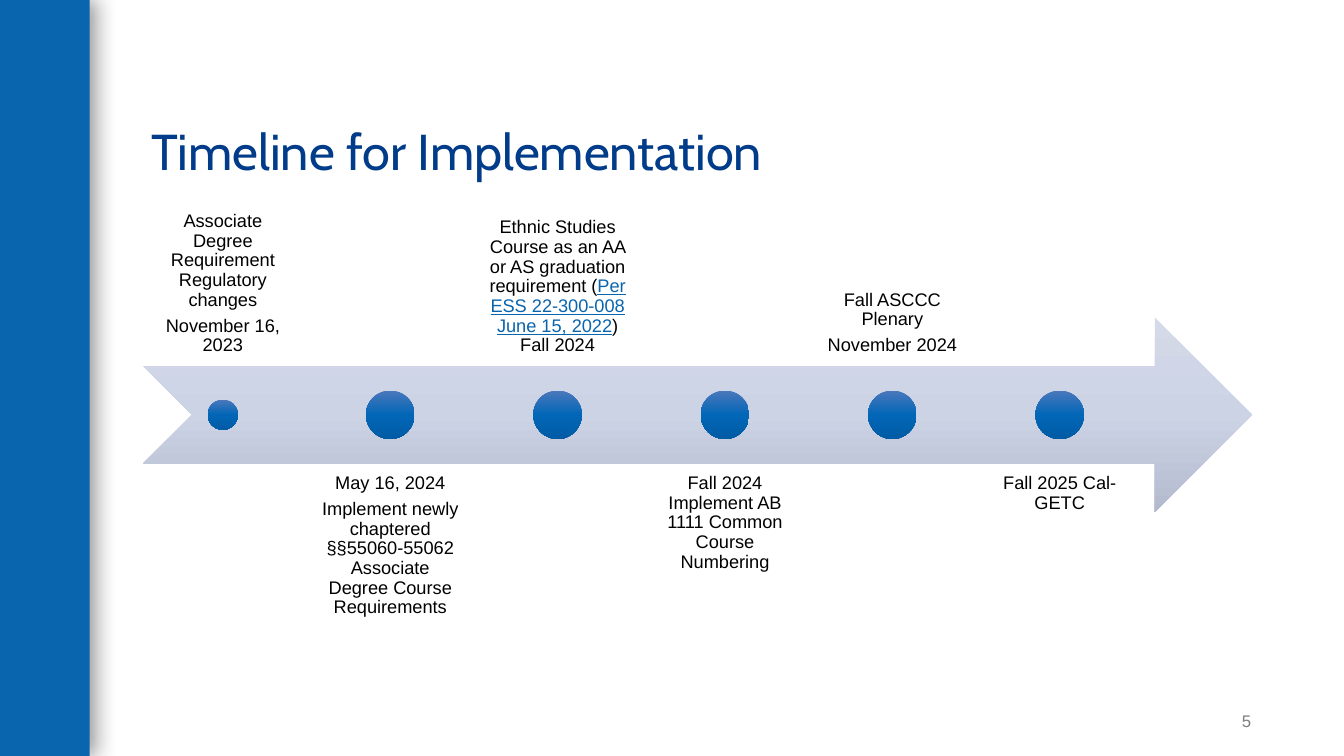
from pptx import Presentation
from pptx.dml.color import RGBColor
from pptx.enum.shapes import MSO_SHAPE
from pptx.enum.text import MSO_ANCHOR, PP_ALIGN
from pptx.oxml import parse_xml
from pptx.oxml.ns import nsdecls
from pptx.util import Inches, Pt

RECTANGLE, ARROW, OVAL = MSO_SHAPE.RECTANGLE, MSO_SHAPE.NOTCHED_RIGHT_ARROW, MSO_SHAPE.OVAL
TOP, MIDDLE, BOTTOM = MSO_ANCHOR.TOP, MSO_ANCHOR.MIDDLE, MSO_ANCHOR.BOTTOM
LEFT, CENTER, RIGHT = PP_ALIGN.LEFT, PP_ALIGN.CENTER, PP_ALIGN.RIGHT

TITLE = "Timeline for Implementation"
PAGE_NUMBER = "5"
REFERENCE = "Per ESS 22-300-008 June 15, 2022"
# Each milestone is a list of paragraphs, each paragraph a list of runs.
MILESTONES = [
    [["Associate Degree Requirement Regulatory changes"], ["November 16, 2023"]],
    [["May 16, 2024"],
     ["Implement newly chaptered §§55060-55062 Associate Degree Course Requirements"]],
    [["Ethnic Studies Course as an AA or AS graduation requirement (",
      REFERENCE, ") Fall 2024"]],
    [["Fall 2024 Implement AB 1111 Common Course Numbering"]],
    [["Fall ASCCC Plenary"], ["November 2024"]],
    [["Fall 2025 Cal-GETC"]],
]

COLORS = {"sidebar": "0A65AF", "title": "003C89", "text": "000000",
          "reference": "0965AE", "page": "7F7F7F"}
ARROW_GRADIENT = ("D5DAE8", "CBD3E5", "B3BACD")
DOT_GRADIENT = ("4B78BB", "0266B7", "005BA4")

ARROW_LEFT, ARROW_TOP, ARROW_WIDTH, ARROW_HEIGHT = 1.42, 3.15, 11, 1.93
ARROW_MIDDLE = ARROW_TOP + ARROW_HEIGHT / 2
LABEL_WIDTH, LABEL_STEP = 1.58, 1.66
LABEL_TOP_ABOVE, LABEL_TOP_BELOW = 1.7, 4.6
FIRST_DOT_SIZE, DOT_SIZE = 0.3, 0.48


def format_run(run, size, color, font="Arial"):
    run.font.name = font
    run.font.size = Pt(size)
    run.font.color.rgb = RGBColor.from_string(COLORS[color])


def add_plain_shape(slide, kind, left, top, width, height):
    """Add a preset shape with neither outline nor shadow."""
    shape = slide.shapes.add_shape(
        kind, Inches(left), Inches(top), Inches(width), Inches(height))
    shape.shadow.inherit = False
    shape.line.fill.background()
    return shape


def fill_gradient(shape, colors):
    """Fill from top to bottom with evenly spaced colours."""
    shape.fill.gradient()
    shape.fill.gradient_angle = 270
    stops = shape._element.spPr.find(".//{*}gsLst")
    for stop in list(stops):
        stops.remove(stop)
    for index, color in enumerate(colors):
        position = 100000 * index // (len(colors) - 1)
        stops.append(parse_xml(
            f'<a:gs {nsdecls("a")} pos="{position}"><a:srgbClr val="{color}"/></a:gs>'))


def add_text_box(slide, left, top, width, height, anchor):
    box = slide.shapes.add_textbox(Inches(left), Inches(top), Inches(width), Inches(height))
    frame = box.text_frame
    frame.word_wrap = True
    frame.vertical_anchor = anchor
    return frame


def add_sidebar(slide):
    sidebar = add_plain_shape(slide, RECTANGLE, -0.01, 0, 0.9, 7.5)
    sidebar.fill.solid()
    sidebar.fill.fore_color.rgb = RGBColor.from_string(COLORS["sidebar"])
    sidebar._element.spPr.find("{*}effectLst").append(parse_xml(
        f'<a:outerShdw {nsdecls("a")} blurRad="{Pt(15)}" dist="{Pt(4)}" dir="0" '
        'algn="l" rotWithShape="0"><a:srgbClr val="000000"><a:alpha val="40000"/>'
        '</a:srgbClr></a:outerShdw>'))


def add_title(slide):
    title = slide.shapes.title
    title.left, title.top = Inches(1.4), Inches(0.4)
    title.width, title.height = Inches(10.99), Inches(1.45)
    title.text_frame.text = TITLE
    title.text_frame.vertical_anchor = BOTTOM
    paragraph = title.text_frame.paragraphs[0]
    paragraph.alignment = LEFT
    paragraph.line_spacing = 0.9
    format_run(paragraph.runs[0], 36, "title", "Cabin")


def add_label(slide, index, paragraphs):
    above = index % 2 == 0
    frame = add_text_box(
        slide, ARROW_LEFT + index * LABEL_STEP,
        LABEL_TOP_ABOVE if above else LABEL_TOP_BELOW,
        LABEL_WIDTH, ARROW_HEIGHT, BOTTOM if above else TOP)
    frame.margin_left = frame.margin_right = Inches(0.1)
    frame.margin_top = frame.margin_bottom = Inches(0.1)
    for number, texts in enumerate(paragraphs):
        paragraph = frame.add_paragraph() if number else frame.paragraphs[0]
        paragraph.alignment = CENTER
        paragraph.line_spacing = 0.9
        paragraph.space_after = Pt(4.55)
        for text in texts:
            run = paragraph.add_run()
            run.text = text
            is_reference = text == REFERENCE
            format_run(run, 13, "reference" if is_reference else "text")
            if is_reference:
                run.font.underline = True


def add_dot(slide, index):
    size = DOT_SIZE if index else FIRST_DOT_SIZE
    center = ARROW_LEFT + index * LABEL_STEP + LABEL_WIDTH / 2
    dot = add_plain_shape(
        slide, OVAL, center - size / 2, ARROW_MIDDLE - size / 2, size, size)
    fill_gradient(dot, DOT_GRADIENT)


def add_page_number(slide):
    frame = add_text_box(slide, 11.41, 6.95, 1, 0.4, MIDDLE)
    frame.margin_right = 0
    frame.text = PAGE_NUMBER
    paragraph = frame.paragraphs[0]
    paragraph.alignment = RIGHT
    format_run(paragraph.runs[0], 12, "page")


def main():
    presentation = Presentation()
    presentation.slide_width, presentation.slide_height = Inches(13.33), Inches(7.5)
    slide = presentation.slides.add_slide(presentation.slide_layouts[5])
    add_sidebar(slide)
    add_title(slide)
    arrow = add_plain_shape(slide, ARROW, ARROW_LEFT, ARROW_TOP, ARROW_WIDTH, ARROW_HEIGHT)
    fill_gradient(arrow, ARROW_GRADIENT)
    for index, paragraphs in enumerate(MILESTONES):
        add_label(slide, index, paragraphs)
        add_dot(slide, index)
    add_page_number(slide)
    presentation.save("out.pptx")


if __name__ == "__main__":
    main()
